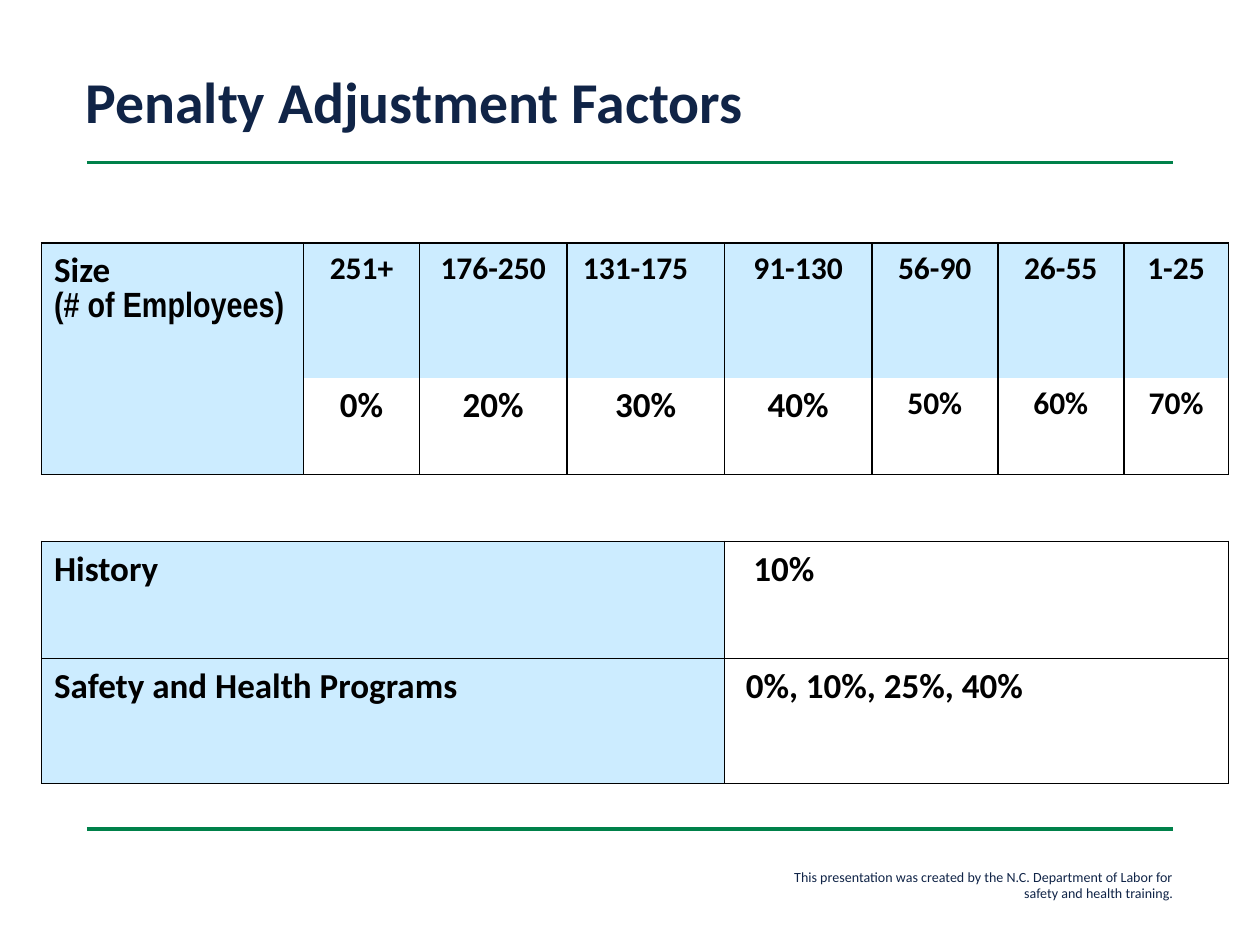
import pptx
import pptx.util
import pptx.dml.color
import pptx.enum.shapes
import pptx.enum.text
import pptx.oxml
import pptx.oxml.ns

Inches = pptx.util.Inches
Pt = pptx.util.Pt
RGB = pptx.dml.color.RGBColor
ALIGN = pptx.enum.text.PP_ALIGN
ANCHOR = pptx.enum.text.MSO_ANCHOR

NAVY = RGB(0x10, 0x24, 0x47)
GREEN = RGB(0x00, 0x81, 0x4A)
PALE = RGB(0xCC, 0xEC, 0xFF)
WHITE = RGB(0xFF, 0xFF, 0xFF)
BLACK = RGB(0, 0, 0)
FONT = "Calibri"

COLS = [2.08, 0.92, 1.17, 1.25, 1.17, 1, 1, 0.83]
ROWS = [1.07, 0.7, 0.53, 0.93, 0.99]
SIZES = ["251+", "176-250", "131-175", "91-130", "56-90", "26-55", "1-25"]
RATES = ["0%", "20%", "30%", "40%", "50%", "60%", "70%"]
OTHER = [("History", "10%", 0.23),
         ("Safety and Health Programs", "0%, 10%, 25%, 40%", 0.17)]


def style(para, size, color, bold=False, align=ALIGN.LEFT, font=FONT):
    para.alignment = align
    for run in para.runs:
        run.font.name = font
        run.font.size = Pt(size)
        run.font.bold = bold
        run.font.color.rgb = color


def add_title(slide, x, y, w, h):
    title = slide.shapes.title
    title.left, title.top, title.width, title.height = map(Inches, (x, y, w, h))
    frame = title.text_frame
    frame.text = "Penalty Adjustment Factors"
    frame.vertical_anchor = ANCHOR.MIDDLE
    frame.paragraphs[0].line_spacing = 0.9
    style(frame.paragraphs[0], 33, NAVY, True)


def add_rule(slide, x, y, w):
    rule = slide.shapes.add_connector(
        pptx.enum.shapes.MSO_CONNECTOR.STRAIGHT,
        Inches(x), Inches(y), Inches(x + w), Inches(y))
    rule.line.color.rgb = GREEN
    rule.line.width = Pt(2)
    rule._element.spPr.append(pptx.oxml.parse_xml(
        "<a:effectLst %s/>" % pptx.oxml.ns.nsdecls("a")))


def add_credit(slide, x, y, w, h):
    box = slide.shapes.add_textbox(Inches(x), Inches(y), Inches(w), Inches(h))
    frame = box.text_frame
    frame.word_wrap = True
    frame.text = ("This presentation was created by the N.C. Department of Labor "
                  "for safety and health training.")
    style(frame.paragraphs[0], 8, NAVY, align=ALIGN.RIGHT)


def set_edges(cell, edges):
    props = cell._tc.get_or_add_tcPr()
    space = pptx.oxml.ns.nsdecls("a")
    for side in "LRTB":
        fill = "<a:noFill/>"
        if side in edges:
            fill = f'<a:solidFill><a:srgbClr val="{BLACK}"/></a:solidFill>'
        props.append(pptx.oxml.parse_xml(
            f'<a:ln{side} {space} w="12700">{fill}</a:ln{side}>'))


def put(table, row, col, text, size=20, fill=None, edges="LRTB",
        span=(1, 1), align=ALIGN.LEFT, left=0.1, right=0.1):
    cell = table.cell(row, col)
    for r in range(row, row + span[0]):
        for c in range(col, col + span[1]):
            part = table.cell(r, c)
            set_edges(part, edges)
            if fill is None:
                part.fill.background()
            else:
                part.fill.solid()
                part.fill.fore_color.rgb = fill
    if span != (1, 1):
        cell.merge(table.cell(row + span[0] - 1, col + span[1] - 1))
    cell.margin_left, cell.margin_right = Inches(left), Inches(right)
    cell.text_frame.text = text
    for para in cell.text_frame.paragraphs:
        style(para, size, BLACK, True, align)
    return cell


def add_grid(slide, x, y, w, h):
    table = slide.shapes.add_table(len(ROWS), len(COLS), Inches(x), Inches(y),
                                   Inches(w), Inches(h)).table
    table.first_row = table.horz_banding = False
    for col, width in zip(table.columns, COLS):
        col.width = Inches(width)
    for row, height in zip(table.rows, ROWS):
        row.height = Inches(height)

    head = put(table, 0, 0, "Size\n(# of Employees)", fill=PALE, span=(2, 1))
    style(head.text_frame.paragraphs[1], 20, BLACK, True, font="Arial Narrow")
    for col, (size, rate) in enumerate(zip(SIZES, RATES), 1):
        put(table, 0, col, size, 18, PALE, "LRT", align=ALIGN.CENTER,
            right=0.26 if size == "131-175" else 0.1)
        put(table, 1, col, rate, 20 if col < 5 else 18, edges="LRB",
            align=ALIGN.CENTER)
    put(table, 2, 0, "", fill=WHITE, edges="TB", span=(1, 8))
    for row, (name, rate, left) in enumerate(OTHER, 3):
        put(table, row, 0, name, fill=PALE, span=(1, 4))
        put(table, row, 4, rate, span=(1, 4), left=left)


def main():
    deck = pptx.Presentation()
    deck.slide_width, deck.slide_height = Inches(10), Inches(7.5)
    slide = deck.slides.add_slide(deck.slide_layouts[5])
    for y in (1.29, 6.58):
        add_rule(slide, 0.69, y, 8.62)
    add_credit(slide, 6.16, 6.84, 3.25, 0.37)
    add_title(slide, 0.58, 0.53, 9, 0.6)
    add_grid(slide, 0.33, 1.93, sum(COLS), sum(ROWS))
    deck.save("out.pptx")


if __name__ == "__main__":
    main()
